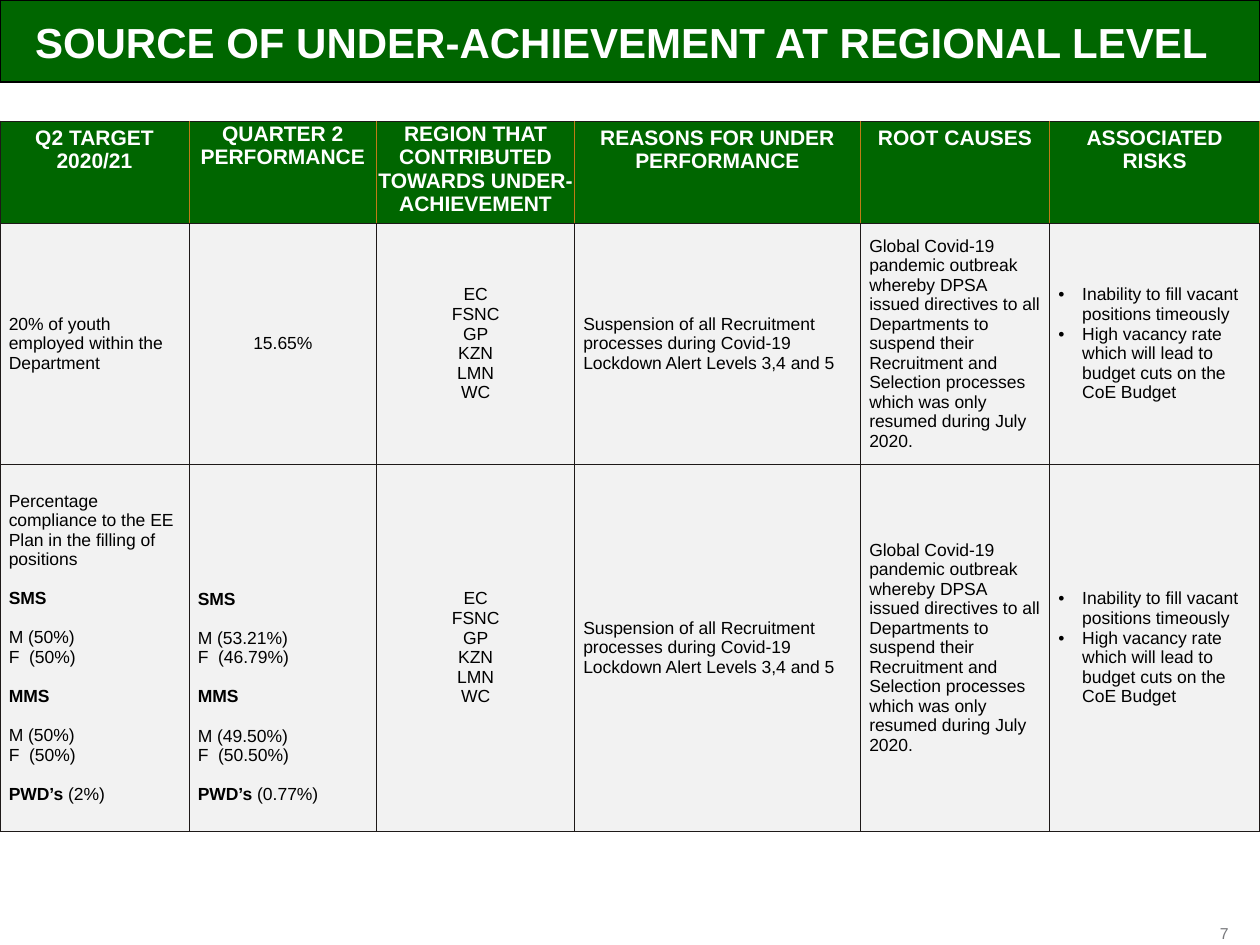
from lxml import etree
from pptx import Presentation
from pptx.dml.color import RGBColor
from pptx.enum.shapes import MSO_SHAPE as Shape
from pptx.enum.text import MSO_ANCHOR as Anchor, PP_ALIGN as Align
from pptx.oxml.ns import qn
from pptx.util import Inches, Pt

COLORS = {
    "green": "006600", "white": "FFFFFF", "black": "000000", "cell": "F2F2F2",
    "rule": "1E1918", "header_rule": "BF7B17", "number": "77787B",
}
COLUMNS = [1.5, 1.49, 1.57, 2.27, 1.5, 1.67]
ROWS = [0.81, 1.91, 2.91]
BLANK_LINE = 11.2  # height in points of one line of 10 pt text
WIDE = (0.07, 0.04, 0.07, 0.04)
TIGHT = (0.01, 0.01, 0.01, 0)
LOWERED = (0.07, 0.82, 0.07, 0.04)  # five lines lower at the top

# Header cells: paragraphs, margins
HEADERS = [
    (["Q2 TARGET 2020/21"], WIDE),
    (["QUARTER 2\nPERFORMANCE"], TIGHT),
    (["REGION THAT CONTRIBUTED TOWARDS UNDER-ACHIEVEMENT"], TIGHT),
    (["REASONS FOR UNDER", "PERFORMANCE"], WIDE),
    (["ROOT CAUSES"], WIDE),
    (["ASSOCIATED RISKS"], WIDE),
]
REGIONS = ["EC", "FSNC", "GP", "KZN", "LMN", "WC"]
REASON = ["Suspension of all Recruitment processes during Covid-19 "
          "Lockdown Alert Levels 3,4 and 5"]
ROOT_CAUSE = ["Global Covid-19 pandemic outbreak whereby DPSA issued directives "
              "to all Departments to suspend their Recruitment and Selection "
              "processes which was only resumed during July 2020."]
RISKS = ["Inability to fill vacant positions timeously",
         "High vacancy rate which will lead to budget cuts on the CoE Budget"]
YOUTH_TARGET = ["20% of youth employed within the Department"]
YOUTH_RESULT = ["15.65%"]
EQUITY_INTRO = "Percentage compliance to the EE Plan in the filling of positions"


def color(name):
    return RGBColor.from_string(COLORS[name])


def add_run(paragraph, text, size, shade, bold=False):
    run = paragraph.add_run()
    run.text = text
    font = run.font
    font.name, font.size, font.bold = "Arial", Pt(size), bold
    font.color.rgb = color(shade)


def next_paragraph(frame, index):
    return frame.paragraphs[0] if index == 0 else frame.add_paragraph()


def add_label(slide, box, text, size, shade, bold, align, inset):
    label = slide.shapes.add_textbox(*map(Inches, box))
    frame = label.text_frame
    frame.word_wrap = True
    frame.vertical_anchor = Anchor.MIDDLE
    frame.margin_left = frame.margin_right = Inches(inset)
    frame.margin_top = frame.margin_bottom = Inches(inset / 2)
    frame.paragraphs[0].alignment = align
    add_run(frame.paragraphs[0], text, size, shade, bold)


def add_title_band(slide, left, top, width, height):
    band = slide.shapes.add_shape(
        Shape.RECTANGLE, *map(Inches, (left, top, width, height)))
    band.shadow.inherit = False
    band.fill.solid()
    band.fill.fore_color.rgb = color("green")
    band.line.color.rgb = color("black")
    band.line.width = Pt(1)
    add_label(slide, (left + 0.18, top + 0.08, width - 0.34, 0.5),
              "SOURCE OF UNDER-ACHIEVEMENT AT REGIONAL LEVEL",
              24, "white", True, Align.LEFT, 0.1)


def style_cell(cell, fill, margins, anchor, sides):
    """Set borders (left, right, top, bottom), fill, margins and anchor."""
    properties = cell._tc.get_or_add_tcPr()
    for tag, shade in zip(("a:lnL", "a:lnR", "a:lnT", "a:lnB"), sides):
        line = etree.SubElement(properties, qn(tag), w=str(Pt(0.5)))
        solid = etree.SubElement(line, qn("a:solidFill"))
        etree.SubElement(solid, qn("a:srgbClr"), val=COLORS[shade])
    cell.fill.solid()
    cell.fill.fore_color.rgb = color(fill)
    (cell.margin_left, cell.margin_top,
     cell.margin_right, cell.margin_bottom) = map(Inches, margins)
    cell.vertical_anchor = anchor


def fill_header(cell, paragraphs):
    for index, text in enumerate(paragraphs):
        paragraph = next_paragraph(cell.text_frame, index)
        paragraph.alignment = Align.CENTER
        for part, line in enumerate(text.split("\n")):
            if part:
                paragraph.add_line_break()
            add_run(paragraph, line, 12, "white", True)


def fill_lines(cell, lines, align=Align.LEFT, bulleted=False):
    for index, text in enumerate(lines):
        paragraph = next_paragraph(cell.text_frame, index)
        paragraph.alignment = align
        if bulleted:
            properties = paragraph._p.get_or_add_pPr()
            properties.set("marL", str(Inches(0.19)))
            properties.set("indent", str(-Inches(0.19)))
            etree.SubElement(properties, qn("a:buFont"), typeface="Arial")
            etree.SubElement(properties, qn("a:buChar"), char="•")
        add_run(paragraph, text, 10, "black")


def fill_equity(cell, intro, senior, middle, disabled):
    """Groups of male and female shares, one blank line apart."""
    paragraphs = [(True, [(intro, False)])] if intro else []
    for group, (male, female) in (("SMS", senior), ("MMS", middle)):
        paragraphs += [(True, [(group, True)]),
                       (True, [(f"M ({male})", False)]),
                       (False, [(f"F  ({female})", False)])]
    paragraphs.append((True, [("PWD’s", True), (f" ({disabled})", False)]))
    for index, (spaced, runs) in enumerate(paragraphs):
        paragraph = next_paragraph(cell.text_frame, index)
        if spaced and index:
            paragraph.space_before = Pt(BLANK_LINE)
        for text, bold in runs:
            add_run(paragraph, text, 10, "black", bold)


def add_results_table(slide, left, top):
    table = slide.shapes.add_table(
        len(ROWS), len(COLUMNS), Inches(left), Inches(top),
        Inches(sum(COLUMNS)), Inches(sum(ROWS))).table
    table.first_row = table.horz_banding = False
    for column, width in zip(table.columns, COLUMNS):
        column.width = Inches(width)
    for row, height in zip(table.rows, ROWS):
        row.height = Inches(height)

    # Header row
    for index, (paragraphs, margins) in enumerate(HEADERS):
        cell = table.cell(0, index)
        left_rule = "header_rule" if index else "rule"
        style_cell(cell, "green", margins, Anchor.TOP,
                   (left_rule, "header_rule", "rule", "rule"))
        fill_header(cell, paragraphs)

    # Cells that both body rows share
    for row in (1, 2):
        for index in range(len(COLUMNS)):
            margins = LOWERED if (row, index) == (2, 1) else WIDE
            style_cell(table.cell(row, index), "cell", margins,
                       Anchor.MIDDLE, ["rule"] * 4)
        fill_lines(table.cell(row, 2), REGIONS, Align.CENTER)
        fill_lines(table.cell(row, 3), REASON)
        fill_lines(table.cell(row, 4), ROOT_CAUSE)
        fill_lines(table.cell(row, 5), RISKS, bulleted=True)

    # Targets and performance
    fill_lines(table.cell(1, 0), YOUTH_TARGET)
    fill_lines(table.cell(1, 1), YOUTH_RESULT, Align.CENTER)
    fill_equity(table.cell(2, 0), EQUITY_INTRO,
                ("50%", "50%"), ("50%", "50%"), "2%")
    fill_equity(table.cell(2, 1), None,
                ("53.21%", "46.79%"), ("49.50%", "50.50%"), "0.77%")


def main():
    deck = Presentation()
    deck.slide_width, deck.slide_height = Inches(10), Inches(7.5)
    slide = deck.slides.add_slide(deck.slide_layouts[6])
    add_title_band(slide, 0, 0, 10, 0.65)
    add_results_table(slide, 0, 0.96)
    # Page number
    add_label(slide, (9.46, 7.33, 0.29, 0.15), "7", 9, "number", False,
              Align.RIGHT, 0)
    deck.save("out.pptx")


if __name__ == "__main__":
    main()
